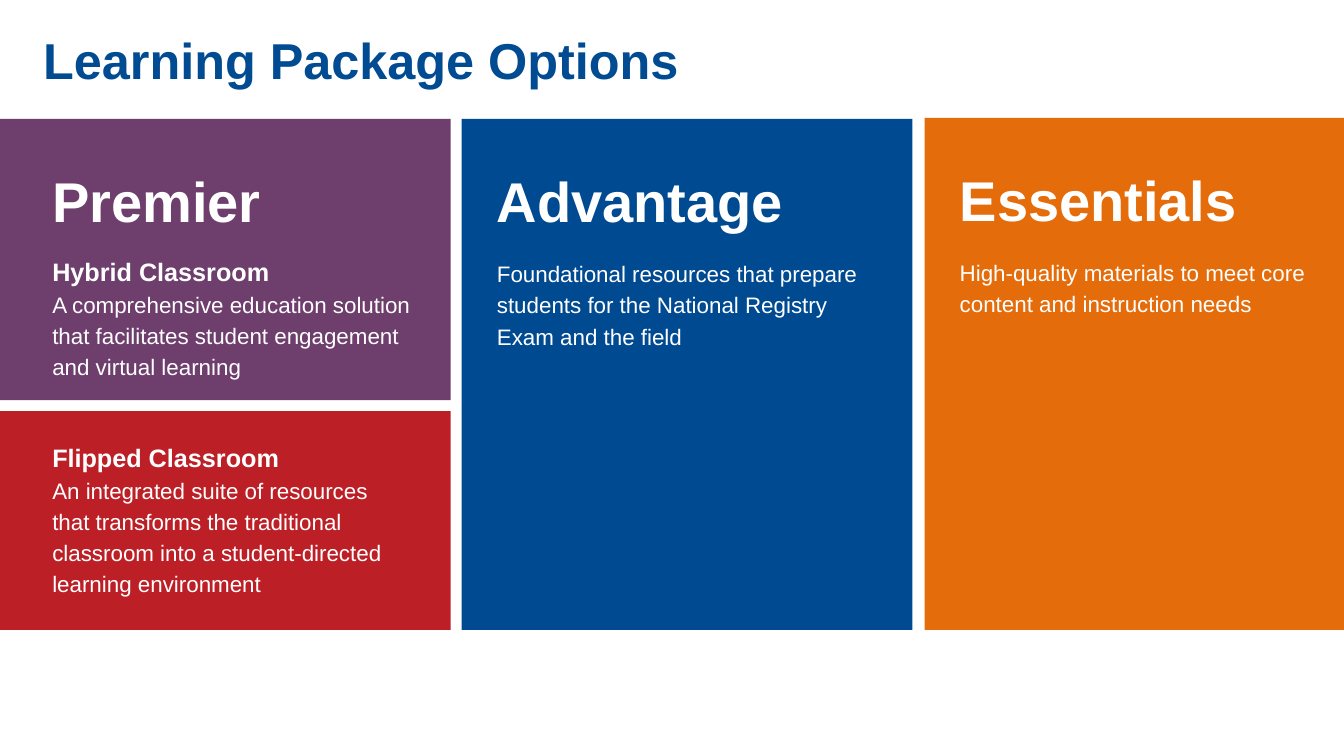
from pptx import Presentation
from pptx.dml.color import RGBColor
from pptx.enum.shapes import MSO_SHAPE
from pptx.enum.text import MSO_ANCHOR
from pptx.util import Inches, Pt

WHITE = "FFFFFF"
HEADING = {"size": Pt(40), "bold": True}
SUBHEADING = {"size": Pt(18), "bold": True}
BODY = {"size": Pt(16), "bold": False}
LINE = {"line_spacing": Pt(22.2)}
SECTION_GAP = {"space_before": Pt(44.4)}
TEXT_WIDTH = 3.92


def color(hex_value):
    return RGBColor.from_string(hex_value)


def set_all(target, values):
    for name, value in values.items():
        setattr(target, name, value)


def add_panel(slide, box, fill):
    panel = slide.shapes.add_shape(MSO_SHAPE.RECTANGLE, *map(Inches, box))
    panel.shadow.inherit = False
    panel.fill.solid()
    panel.fill.fore_color.rgb = color(fill)
    panel.line.fill.background()


def add_text(slide, box, paragraphs, ink=WHITE):
    frame = slide.shapes.add_textbox(*map(Inches, box)).text_frame
    set_all(frame, {"word_wrap": True, "vertical_anchor": MSO_ANCHOR.MIDDLE})
    for index, (wording, font, spacing) in enumerate(paragraphs):
        paragraph = frame.add_paragraph() if index else frame.paragraphs[0]
        paragraph.text = wording
        set_all(paragraph, spacing)
        for run in paragraph.runs:
            set_all(run.font, {"name": "Arial", **font})
            run.font.color.rgb = color(ink)


def add_title(slide, box):
    title = ("Learning Package Options", {"size": Pt(36), "bold": True}, {})
    add_text(slide, box, [title], "004B91")


def add_package(slide, box, panels, name, indent, details, details_top, details_height):
    left, top, width, height = box
    for offset, panel_height, fill in panels:
        add_panel(slide, (left, top + offset, width, panel_height), fill)
    text_left = left + indent
    add_text(slide, (text_left, top + 0.29, TEXT_WIDTH, 1.03), [(name, HEADING, {})])
    add_text(slide, (text_left, top + details_top, TEXT_WIDTH, details_height), details)


def add_premier(slide, box):
    details = [
        ("Hybrid Classroom", SUBHEADING, LINE),
        ("A comprehensive education solution that facilitates student "
         "engagement and virtual learning", BODY, LINE),
        ("Flipped Classroom", SUBHEADING, {**LINE, **SECTION_GAP}),
        ("An integrated suite of resources\vthat transforms the traditional "
         "classroom into a student-directed learning environment", BODY, LINE),
    ]
    panels = [(0, 2.79, "6E3E6D"), (2.9, 2.17, "BC2026")]
    add_package(slide, box, panels, "Premier", 0.42, details, 1.74, 2.62)


def add_single(slide, box, name, summary, fill, summary_top):
    panels = [(0, box[3], fill)]
    add_package(slide, box, panels, name, 0.25, [(summary, BODY, LINE)], summary_top, 1.17)


def main():
    presentation = Presentation()
    presentation.slide_width = Inches(13.33)
    presentation.slide_height = Inches(7.5)
    slide = presentation.slides.add_slide(presentation.slide_layouts[6])
    add_title(slide, (0.33, 0.17, 9.42, 0.84))
    add_premier(slide, (0, 1.18, 4.47, 5.07))
    add_single(slide, (4.58, 1.18, 4.47, 5.07), "Advantage",
               "Foundational resources that prepare students for the "
               "National Registry Exam and the field", "004A91", 1.24)
    add_single(slide, (9.17, 1.17, 4.16, 5.08), "Essentials",
               "High-quality materials to meet core content and "
               "instruction needs", "E46C0A", 1.08)
    presentation.save("out.pptx")


if __name__ == "__main__":
    main()
